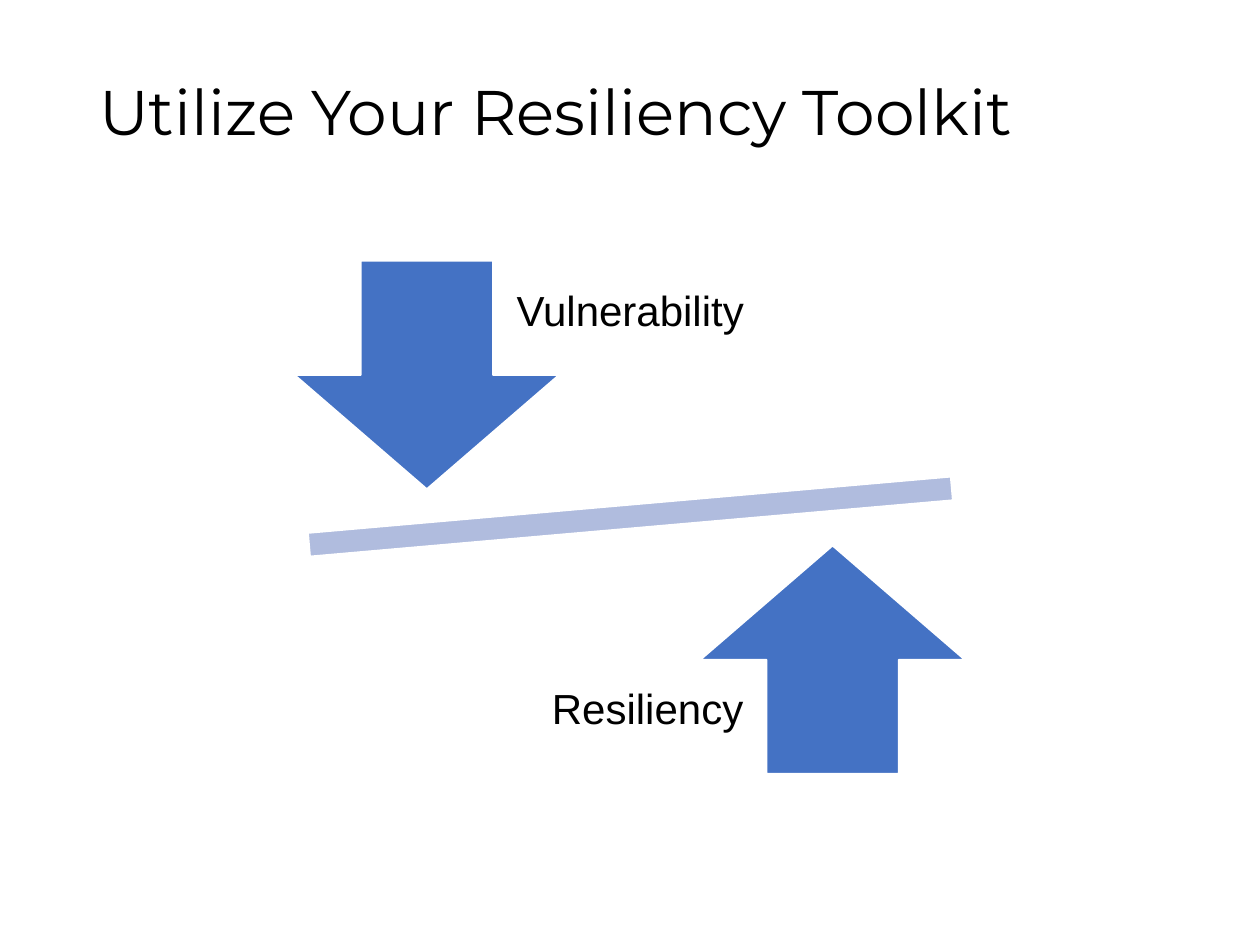
"""Build the resiliency toolkit slide: a tilted beam between two opposing arrows."""
from pptx import Presentation
from pptx import util as u
from pptx.dml.color import RGBColor
from pptx.enum import shapes, text

COLOURS = {"arrow": "4472C4", "beam": "B0BCDE", "edge": "FFFFFF", "text": "000000"}


def add_figure(page, kind, place, colour, rotation=0):
    figure = page.shapes.add_shape(kind, *map(u.Cm, place))
    figure.rotation = rotation
    figure.shadow.inherit = False
    figure.fill.solid()
    figure.fill.fore_color.rgb = RGBColor.from_string(COLOURS[colour])
    figure.line.color.rgb = RGBColor.from_string(COLOURS["edge"])
    figure.line.width = u.Pt(1)


def add_text(page, words, place, font, size, align, inset):
    box = page.shapes.add_textbox(*map(u.Cm, place))
    frame = box.text_frame
    frame.word_wrap = True
    frame.vertical_anchor = text.MSO_ANCHOR.MIDDLE
    frame.margin_left = frame.margin_right = u.Cm(inset[0])
    frame.margin_top = frame.margin_bottom = u.Cm(inset[1])
    para = frame.paragraphs[0]
    para.text = words
    para.alignment = align
    para.line_spacing = 0.9
    para.font.name = font
    para.font.size = u.Pt(size)
    para.font.color.rgb = RGBColor.from_string(COLOURS["text"])


deck = Presentation()
deck.slide_width = u.Cm(25.4)
deck.slide_height = u.Cm(19.05)
page = deck.slides.add_slide(deck.slide_layouts[6])

add_text(page, "Utilize Your Resiliency Toolkit", (1.75, 1.02, 21.9, 2.62),
         "Montserrat", 36, text.PP_ALIGN.LEFT, (0.25, 0.13))
add_figure(page, shapes.MSO_SHAPE.MATH_MINUS, (3.86, 9.4, 17.7, 2.03), "beam", 355)

sides = [
    ("Vulnerability", shapes.MSO_SHAPE.DOWN_ARROW, (5.94, 5.26), (9.86, 5.08, 5.69, 2.44)),
    ("Resiliency", shapes.MSO_SHAPE.UP_ARROW, (14.12, 11), (10.21, 12.93, 5.69, 2.82)),
]
for words, arrow, corner, label_place in sides:
    add_figure(page, arrow, (*corner, 5.33, 4.6), "arrow")
    add_text(page, words, label_place, "Arial", 24, text.PP_ALIGN.CENTER, (0.48, 0.48))

deck.save("out.pptx")
